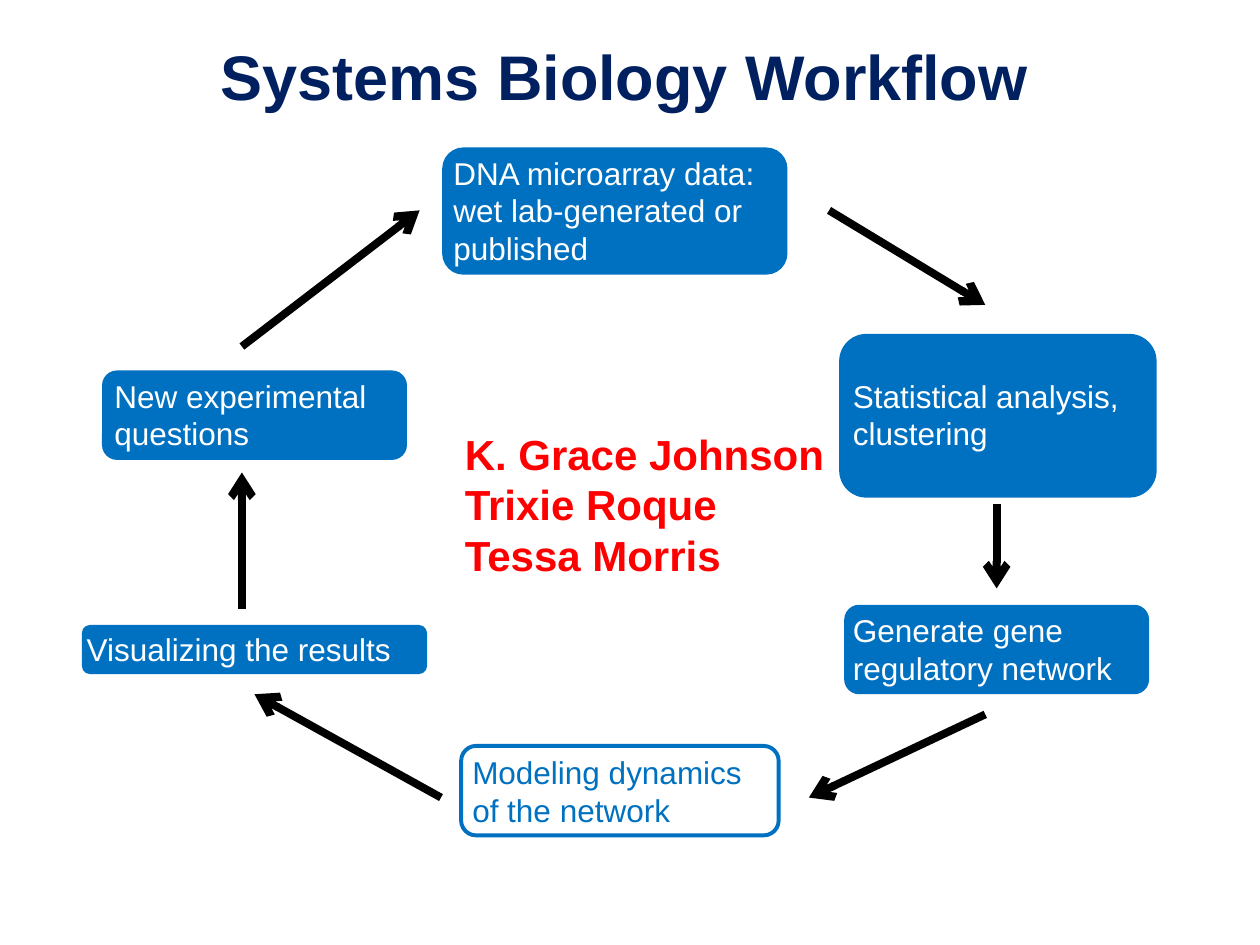
from pptx import Presentation
from pptx.dml.color import RGBColor
from pptx.enum.shapes import MSO_CONNECTOR, MSO_SHAPE
from pptx.enum.text import MSO_AUTO_SIZE, PP_ALIGN
from pptx.oxml.ns import qn
from pptx.util import Inches, Pt
from lxml import etree

STRAIGHT = MSO_CONNECTOR.STRAIGHT
ROUNDED = MSO_SHAPE.ROUNDED_RECTANGLE
FIT_SHAPE = MSO_AUTO_SIZE.SHAPE_TO_FIT_TEXT
LEFT, CENTER = PP_ALIGN.LEFT, PP_ALIGN.CENTER
BLUE, NAVY, WHITE, BLACK, RED = "0070C0", "002060", "FFFFFF", "000000", "FF0000"

STEPS = [
    ("DNA microarray data:\nwet lab-generated or published",
     (3.51, 1.17, 2.74, 1.01), (3.5, 1.17, 2.83, 1.01), {}),
    ("Statistical analysis,\nclustering",
     (6.66, 2.65, 2.52, 1.3), (6.67, 2.94, 2.52, 0.71), {}),
    ("Generate gene regulatory network",
     (6.7, 4.8, 2.42, 0.71), (6.67, 4.8, 2.58, 0.71), {}),
    ("Modeling dynamics of the network",
     (3.66, 5.92, 2.52, 0.71), (3.65, 5.93, 2.53, 0.71), {"outlined": True}),
    ("Visualizing the results",
     (0.65, 4.96, 2.74, 0.39), (0.59, 4.95, 2.86, 0.4), {"wrap": False}),
    ("New experimental questions",
     (0.81, 2.94, 2.42, 0.71), (0.81, 2.94, 2.42, 0.71), {}),
]

ARROWS = [
    ((6.58, 1.67), (7.82, 2.42)),
    ((7.91, 4), (7.91, 4.67)),
    ((7.82, 5.67), (6.42, 6.33)),
    ((3.5, 6.33), (2.02, 5.51)),
    ((1.92, 4.83), (1.92, 3.75)),
    ((1.92, 2.75), (3.33, 1.67)),
]


def color(value):
    """Return the colour for a hex string."""
    return RGBColor.from_string(value)


def add_text(page, text, box, size=18, ink=WHITE, bold=False, align=LEFT, wrap=True):
    """Add a text box with one paragraph for each line of text."""
    frame = page.shapes.add_textbox(*map(Inches, box)).text_frame
    frame.word_wrap = wrap
    frame.auto_size = FIT_SHAPE
    for index, line in enumerate(text.split("\n")):
        para = frame.add_paragraph() if index else frame.paragraphs[0]
        para.alignment = align
        span = para.add_run()
        span.text = line
        span.font.name = "Arial"
        span.font.size = Pt(size)
        span.font.bold = bold
        span.font.color.rgb = color(ink)


def add_step(page, text, box, text_box, outlined=False, wrap=True):
    """Add a rounded workflow step, filled or outlined, with its label."""
    panel = page.shapes.add_shape(ROUNDED, *map(Inches, box))
    panel.shadow.inherit = False
    if outlined:
        panel.fill.background()
        panel.line.color.rgb = color(BLUE)
        panel.line.width = Pt(2.25)
    else:
        panel.fill.solid()
        panel.fill.fore_color.rgb = color(BLUE)
        panel.line.fill.background()
    add_text(page, text, text_box, ink=BLUE if outlined else WHITE, wrap=wrap)


def add_arrow(page, start, end):
    """Add a thick black arrow between two points."""
    arrow = page.shapes.add_connector(STRAIGHT, *map(Inches, start + end))
    arrow.line.color.rgb = color(BLACK)
    arrow.line.width = Pt(4.5)
    etree.SubElement(arrow.line._get_or_add_ln(), qn("a:tailEnd"), type="arrow")
    etree.SubElement(arrow._element.spPr, qn("a:effectLst"))


def add_workflow(page):
    """Add the ring of steps and the arrows that join them."""
    for text, box, text_box, options in STEPS:
        add_step(page, text, box, text_box, **options)
    for start, end in ARROWS:
        add_arrow(page, start, end)


def main():
    """Build and save the workflow slide."""
    deck = Presentation()
    deck.slide_width, deck.slide_height = Inches(10), Inches(7.5)
    page = deck.slides.add_slide(deck.slide_layouts[6])
    add_text(page, "Systems Biology Workflow", (1.08, 0.25, 7.75, 0.71),
             size=36, ink=NAVY, bold=True, align=CENTER)
    add_workflow(page)
    add_text(page, "K. Grace Johnson\nTrixie Roque\nTessa Morris",
             (3.59, 3.35, 3.08, 1.31), size=24, ink=RED, bold=True, wrap=False)
    deck.save("out.pptx")


if __name__ == "__main__":
    main()
